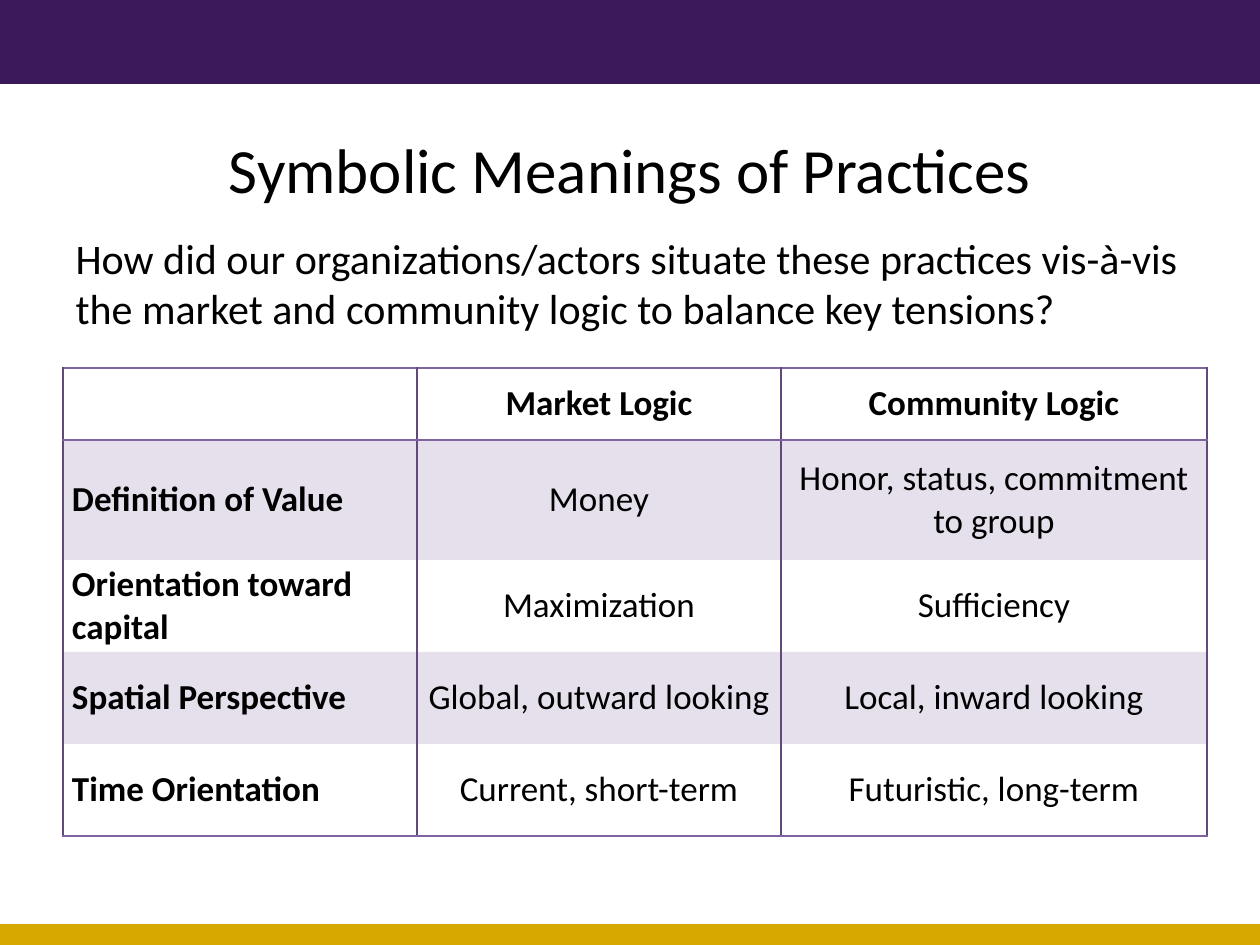
from lxml import etree
from pptx import Presentation
from pptx.dml.color import RGBColor
from pptx.enum.shapes import MSO_SHAPE
from pptx.enum.text import MSO_ANCHOR, PP_ALIGN
from pptx.oxml.ns import qn
from pptx.util import Pt

RECTANGLE = MSO_SHAPE.RECTANGLE
MIDDLE, TOP = MSO_ANCHOR.MIDDLE, MSO_ANCHOR.TOP
LEFT, CENTER = PP_ALIGN.LEFT, PP_ALIGN.CENTER
PLAIN_TABLE_STYLE = "{2D5ABB26-0587-4C30-8999-92F81FD0307C}"
SIDE_LINE, ROW_LINE, BAND = "604A7B", "8064A2", "8064A2"


def px(*lengths):
    """Turn lengths at 126 pixels to the inch into EMU."""
    return [round(length * 914400 / 126) for length in lengths]


def add_text(paragraph, text, size, alignment, bold=False):
    paragraph.alignment = alignment
    run = paragraph.add_run()
    run.text = text
    run.font.name = "Calibri"
    run.font.size = Pt(size)
    run.font.bold = bold
    run.font.color.rgb = RGBColor.from_string("000000")


presentation = Presentation()
presentation.slide_width, presentation.slide_height = px(1260, 945)
slide = presentation.slides.add_slide(presentation.slide_layouts[1])

# Bands at the top and bottom edges
for top, height, color in [(0, 84, "3B185A"), (924, 21, "D7A900")]:
    band = slide.shapes.add_shape(RECTANGLE, *px(0, top, 1260, height))
    band.shadow.inherit = False
    band.fill.solid()
    band.fill.fore_color.rgb = RGBColor.from_string(color)
    band.line.fill.background()

# Title
title = slide.shapes.title
title.left, title.top, title.width, title.height = px(63, 105, 1134, 126)
title.text_frame.vertical_anchor = MIDDLE
add_text(title.text_frame.paragraphs[0], "Symbolic Meanings of Practices", 36, CENTER)

# Question under the title, without a bullet
body = slide.placeholders[1]
body.left, body.top, body.width, body.height = px(63, 221, 1134, 126)
body.text_frame.vertical_anchor = TOP
body.text_frame.margin_top = px(11)[0]
question = body.text_frame.paragraphs[0]
properties = question._p.get_or_add_pPr()
properties.set("marL", "0")
properties.set("indent", "0")
etree.SubElement(properties, qn("a:buNone"))
question.space_before = Pt(0)
add_text(question, "How did our organizations/actors situate these practices vis-à-vis "
         "the market and community logic to balance key tensions?", 24, LEFT)

# Table of logics
rows = [
    ["", "Market Logic", "Community Logic"],
    ["Definition of Value", "Money", "Honor, status, commitment to group"],
    ["Orientation toward capital", "Maximization", "Sufficiency"],
    ["Spatial Perspective", "Global, outward looking", "Local, inward looking"],
    ["Time Orientation", "Current, short-term", "Futuristic, long-term"],
]
column_widths = px(354, 364, 426)
row_heights = px(72, 120, 92, 92, 92)
table = slide.shapes.add_table(
    len(rows), len(column_widths), *px(63, 368, 1144, 468)).table
table.horz_banding = False
table._tbl.tblPr.find(qn("a:tableStyleId")).text = PLAIN_TABLE_STYLE
for column, width in zip(table.columns, column_widths):
    column.width = width
for row, height in zip(table.rows, row_heights):
    row.height = height

for row_index, row in enumerate(rows):
    for column_index, text in enumerate(row):
        cell = table.cell(row_index, column_index)
        cell.vertical_anchor = MIDDLE
        cell.margin_left, cell.margin_right = px(9, 9)
        cell.margin_top = cell.margin_bottom = 0
        heading = row_index == 0 or column_index == 0
        if text:
            add_text(cell.text_frame.paragraphs[0], text, 20,
                     CENTER if column_index else LEFT, heading)

        # Lines: every side, plus the header and the table's bottom edge
        lines = [("a:lnL", SIDE_LINE), ("a:lnR", SIDE_LINE)]
        if row_index == 0:
            lines.append(("a:lnT", ROW_LINE))
        if row_index in (0, len(rows) - 1):
            lines.append(("a:lnB", ROW_LINE))
        cell_properties = cell._tc.get_or_add_tcPr()
        for tag, color in lines:
            line = etree.SubElement(cell_properties, qn(tag), w=str(Pt(1)))
            line_fill = etree.SubElement(line, qn("a:solidFill"))
            etree.SubElement(line_fill, qn("a:srgbClr"), val=color)

        # Every second row is tinted at 20 percent
        if row_index % 2:
            cell.fill.solid()
            cell.fill.fore_color.rgb = RGBColor.from_string(BAND)
            tint = cell_properties.find(qn("a:solidFill")).find(qn("a:srgbClr"))
            etree.SubElement(tint, qn("a:alpha"), val="20000")
        else:
            cell.fill.background()

presentation.save("out.pptx")
